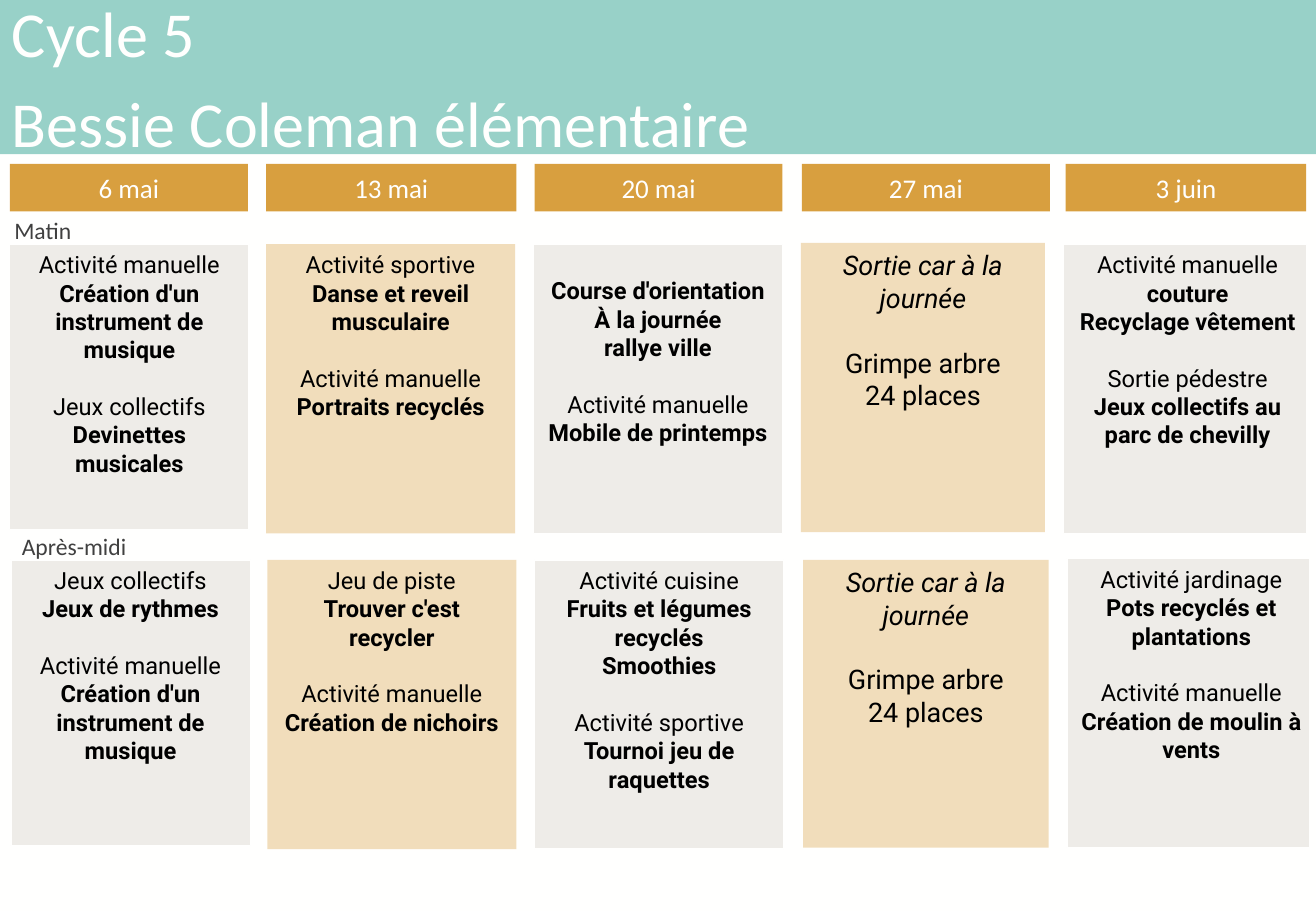
from lxml import etree
from pptx import Presentation
from pptx.dml.color import RGBColor
from pptx.enum import shapes, text
from pptx.oxml import ns
from pptx.util import Pt

TEAL = RGBColor(0x98, 0xD1, 0xC8)
OCHRE = RGBColor(0xD8, 0x9F, 0x3F)
GREY = RGBColor(0xEE, 0xEC, 0xE8)
WHITE = RGBColor(0xFF, 0xFF, 0xFE)
BLACK = RGBColor(0, 0, 0)
DARK = RGBColor(0x40, 0x40, 0x40)

SLIDE_WIDTH, SLIDE_HEIGHT = 779.76, 540
BANNER_HEIGHT = 91.44
DATE_TOP, DATE_HEIGHT = 97.2, 28.1
LINE_HEIGHT = 1.2
PLAIN, BOLD, ITALIC = "plain", "bold", "italic"


def activity(kind, *details):
    return [(kind, PLAIN)] + [(detail, BOLD) for detail in details]


TRIP = [[("Sortie car à la journée", ITALIC)],
        [("Grimpe arbre", PLAIN), ("24 places", PLAIN)]]

# Date, left and width of each column heading
DATES = [("6 mai", 5.8, 141.1), ("13 mai", 157.7, 148.3),
         ("20 mai", 316.8, 146.9), ("27 mai", 475.2, 146.9),
         ("3 juin", 631.4, 142.6)]

# Each half day: label, label box, then cards as (box, groups of lines)
MORNING = ("Matin", (1.4, 124.6, 80, 24.5), [
    ((5.8, 144.7, 141.8, 169.2),
     [activity("Activité manuelle", "Création d'un instrument de musique"),
      activity("Jeux collectifs", "Devinettes musicales")]),
    ((157.7, 144.7, 147.6, 171.4),
     [activity("Activité sportive", "Danse et reveil musculaire"),
      activity("Activité manuelle", "Portraits recyclés")]),
    ((316.1, 144.7, 147.6, 171.4),
     [[("Course d'orientation", BOLD), ("À la journée", BOLD),
       ("rallye ville", BOLD)],
      activity("Activité manuelle", "Mobile de printemps")]),
    ((474.5, 144, 144.7, 171.4), TRIP),
    ((630, 144.7, 144, 171.4),
     [activity("Activité manuelle", "couture", "Recyclage vêtement"),
      activity("Sortie pédestre", "Jeux collectifs au parc de chevilly")]),
])
AFTERNOON = ("Après-midi", (5.8, 311.8, 90, 24.5), [
    ((6.5, 331.9, 141.8, 169.2),
     [activity("Jeux collectifs", "Jeux de rythmes"),
      activity("Activité manuelle", "Création d'un instrument de musique")]),
    ((158.4, 331.9, 147.6, 171.4),
     [activity("Jeu de piste", "Trouver c'est recycler"),
      activity("Activité manuelle", "Création de nichoirs")]),
    ((316.8, 331.9, 147.6, 171.4),
     [activity("Activité cuisine", "Fruits et légumes recyclés", "Smoothies"),
      activity("Activité sportive", "Tournoi jeu de raquettes")]),
    ((475.9, 331.9, 145.4, 170.6), TRIP),
    ((632.2, 331.2, 144, 171.4),
     [activity("Activité jardinage", "Pots recyclés et plantations"),
      activity("Activité manuelle", "Création de moulin à vents")]),
])


def add_block(slide, box, color):
    """Add a plain filled rectangle."""
    shape = slide.shapes.add_shape(shapes.MSO_SHAPE.RECTANGLE,
                                   *[Pt(length) for length in box])
    shape.shadow.inherit = False
    shape.fill.solid()
    shape.fill.fore_color.rgb = color
    shape.line.fill.background()
    shape.text_frame.word_wrap = True
    return shape


def format_paragraph(paragraph, font_name, size, color, align):
    paragraph.alignment = align
    for run in paragraph.runs:
        run.font.name = font_name
        run.font.size = Pt(size)
        run.font.color.rgb = color


def draw_banner(slide, box):
    frame = add_block(slide, box, TEAL).text_frame
    frame.vertical_anchor = text.MSO_ANCHOR.MIDDLE
    frame.text = "Cycle 5\nBessie Coleman élémentaire"
    for paragraph in frame.paragraphs:
        format_paragraph(paragraph, "Calibri", 38, WHITE, text.PP_ALIGN.LEFT)
    frame.paragraphs[1].space_before = Pt(7.6)


def draw_date(slide, box, date):
    frame = add_block(slide, box, OCHRE).text_frame
    frame.vertical_anchor = text.MSO_ANCHOR.MIDDLE
    frame.text = date
    format_paragraph(frame.paragraphs[0], "Calibri", 16, WHITE,
                     text.PP_ALIGN.CENTER)


def draw_label(slide, box, label):
    frame = slide.shapes.add_textbox(
        *[Pt(length) for length in box]).text_frame
    frame.word_wrap = True
    frame.text = label
    format_paragraph(frame.paragraphs[0], "Calibri", 14, DARK,
                     text.PP_ALIGN.LEFT)


def draw_card(slide, box, groups, tinted):
    shape = add_block(slide, box, OCHRE if tinted else GREY)
    if tinted:
        color = shape._element.spPr.find(".//" + ns.qn("a:srgbClr"))
        etree.SubElement(color, ns.qn("a:alpha"), val="35000")
    else:
        shape.line.color.rgb = WHITE
        shape.line.width = Pt(0.75)

    frame = shape.text_frame
    frame.vertical_anchor = text.MSO_ANCHOR.TOP
    size = 16 if groups is TRIP else 14
    # A card that opens with a bold line starts one line lower
    if groups[0][0][1] == BOLD:
        frame.margin_top = Pt(2.2 + size * LINE_HEIGHT)
    frame.margin_right = Pt(3.6 if box[0] >= 630 else 7.2)

    lines = [(line, style, index > 0 and position == 0)
             for index, group in enumerate(groups)
             for position, (line, style) in enumerate(group)]
    frame.text = "\n".join(line for line, _, _ in lines)
    for paragraph, (_, style, opens_group) in zip(frame.paragraphs, lines):
        format_paragraph(paragraph, "Roboto", size, BLACK,
                         text.PP_ALIGN.CENTER)
        paragraph.runs[0].font.bold = style == BOLD
        paragraph.runs[0].font.italic = style == ITALIC
        if opens_group:
            paragraph.space_before = Pt(size * LINE_HEIGHT)


def draw_half_day(slide, label, label_box, cards):
    draw_label(slide, label_box, label)
    for column, (box, groups) in enumerate(cards):
        draw_card(slide, box, groups, tinted=column % 2 == 1)


def main():
    presentation = Presentation()
    presentation.slide_width = Pt(SLIDE_WIDTH)
    presentation.slide_height = Pt(SLIDE_HEIGHT)
    slide = presentation.slides.add_slide(presentation.slide_layouts[6])
    slide.background.fill.solid()
    slide.background.fill.fore_color.rgb = WHITE

    # Title and dates
    draw_banner(slide, (0, 0, SLIDE_WIDTH, BANNER_HEIGHT))
    for date, left, width in DATES:
        draw_date(slide, (left, DATE_TOP, width, DATE_HEIGHT), date)

    # Activities
    for half_day in (MORNING, AFTERNOON):
        draw_half_day(slide, *half_day)

    presentation.save("out.pptx")


if __name__ == "__main__":
    main()
